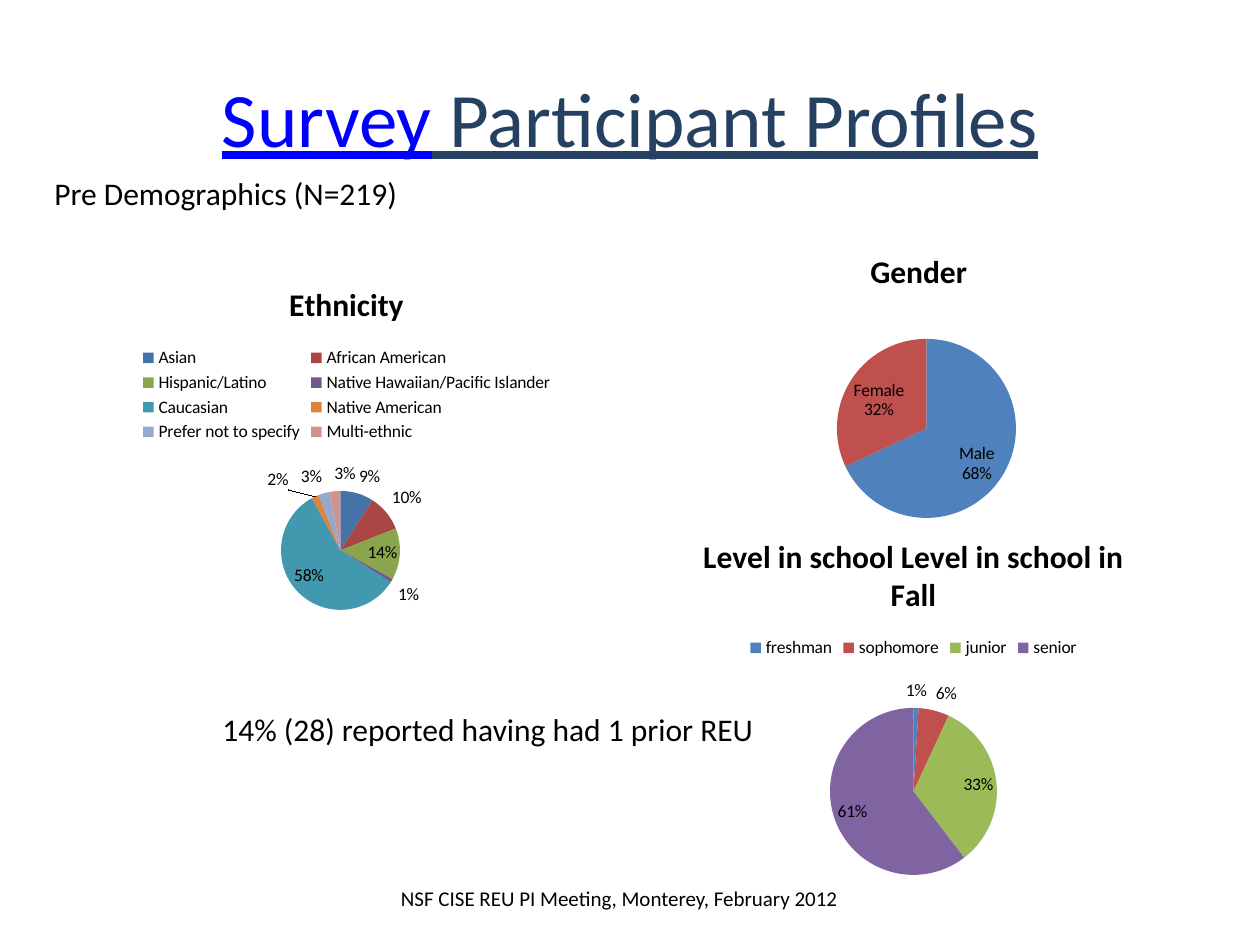
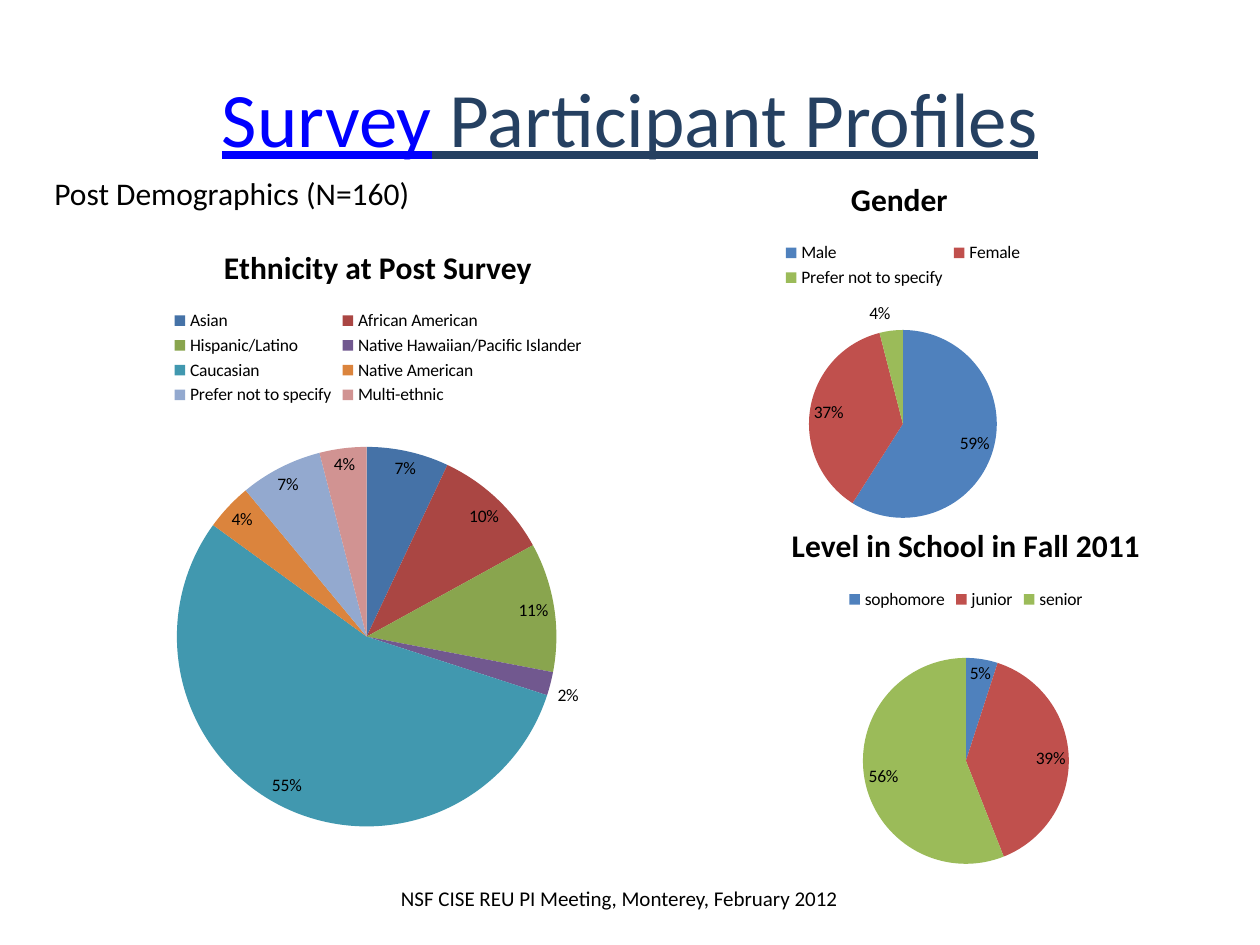
from pptx import Presentation
from pptx.chart.data import CategoryChartData
from pptx.dml.color import RGBColor
from pptx.enum.chart import XL_CHART_TYPE as ChartType
from pptx.enum.chart import XL_LABEL_POSITION as LabelPosition
from pptx.enum.chart import XL_LEGEND_POSITION as LegendPosition
from pptx.enum.text import MSO_ANCHOR as Anchor
from pptx.enum.text import PP_ALIGN as Align
from pptx.oxml import parse_xml
from pptx.oxml.ns import nsdecls, qn
from pptx.util import Pt

COLORS = {
    "text": "000000", "link": "0000FF", "title": "254061",
    "blue": "4F81BD", "red": "C0504D", "green": "9BBB59", "purple": "8064A2",
    "deep blue": "4572A7", "deep red": "AA4643", "deep green": "89A54E",
    "deep purple": "71588F", "teal": "4198AF", "orange": "DB843D",
    "pale blue": "93A9CF", "pale red": "D19392",
}
BASIC = ["blue", "red", "green", "purple"]
ETHNIC = ["deep blue", "deep red", "deep green", "deep purple",
          "teal", "orange", "pale blue", "pale red"]
ETHNICITIES = ["Asian", "African American", "Hispanic/Latino",
               "Native Hawaiian/Pacific Islander", "Caucasian",
               "Native American", "Prefer not to specify", "Multi-ethnic"]
GENDERS = ["Male", "Female", "Prefer not to specify"]
LEVELS = ["freshman", "sophomore", "junior", "senior"]


class Deck:
    font_name = "Calibri"

    def __init__(self):
        self.prs = Presentation()
        self.prs.slide_width, self.prs.slide_height = Pt(720), Pt(540)
        self.slide = None

    def style(self, font, size, color="text", bold=False):
        font.name, font.size, font.bold = self.font_name, Pt(size), bold
        font.color.rgb = RGBColor.from_string(COLORS[color])

    def run(self, paragraph, text, size, color="text"):
        run = paragraph.add_run()
        run.text = text
        self.style(run.font, size, color)
        return run

    def text(self, box, text, size=18, align=Align.LEFT, anchor=Anchor.TOP):
        frame = self.slide.shapes.add_textbox(*map(Pt, box)).text_frame
        frame.word_wrap = True
        frame.vertical_anchor = anchor
        paragraph = frame.paragraphs[0]
        paragraph.alignment = align
        self.run(paragraph, text, size)

    def profile_slide(self, demographics):
        """Start a slide with the shared title, subtitle and footer."""
        self.slide = self.prs.slides.add_slide(self.prs.slide_layouts[5])
        title = self.slide.shapes.title
        title.left, title.top, title.width, title.height = map(Pt, (36, 21.6, 648, 90))
        title.text_frame.vertical_anchor = Anchor.MIDDLE
        heading = title.text_frame.paragraphs[0]
        heading.alignment = Align.CENTER
        for words, color in (("Survey", "link"), (" Participant Profiles", "title")):
            self.run(heading, words, 44, color).font.underline = True
        self.text((24, 96, 678, 29), demographics)
        self.text((210, 498, 288, 30), "NSF CISE REU PI Meeting, Monterey, February 2012",
                  12, Align.CENTER, Anchor.MIDDLE)

    def pie(self, box, circle, title, categories, values, palette=BASIC,
            series="Series 1", legend=True, names=False, as_values=False):
        """Draw a pie whose circle is (left, top, diameter) on the slide."""
        data = CategoryChartData()
        data.categories = categories
        data.add_series(series, values)
        chart = self.slide.shapes.add_chart(ChartType.PIE, *map(Pt, box), data).chart
        self.style(chart.font, 10)
        heading = chart.chart_title.text_frame.paragraphs[0]
        self.run(heading, title, 18).font.bold = True
        chart.has_legend = legend
        if legend:
            chart.legend.position = LegendPosition.TOP
            chart.legend.include_in_layout = False
            self.style(chart.legend.font, 10)

        plot = chart.plots[0]
        plot.vary_by_categories = True
        for index, color in zip(range(len(categories)), palette):
            fill = plot.series[0].points[index].format.fill
            fill.solid()
            fill.fore_color.rgb = RGBColor.from_string(COLORS[color])
        plot.has_data_labels = True
        labels = plot.data_labels
        self.style(labels.font, 10)
        labels.number_format = '0"%"' if as_values else "0%"
        labels.number_format_is_linked = False
        labels.show_value, labels.show_percentage = as_values, not as_values
        labels.show_category_name = names
        labels.position = LabelPosition.BEST_FIT
        if names:
            separator = parse_xml(f"<c:separator {nsdecls('c')}>\n</c:separator>")
            labels._element.find(qn("c:showBubbleSize")).addnext(separator)
        self.place_circle(chart, box, circle)

    def place_circle(self, chart, box, circle):
        """Fix the plot area and leave the chart background clear."""
        left, top, width, height = box
        x, y, diameter = circle
        shares = {"x": (x - left) / width, "y": (y - top) / height,
                  "w": diameter / width, "h": diameter / height}
        parts = "".join(f'<c:{key} val="{share:.4f}"/>' for key, share in shares.items())
        layout = parse_xml(
            f'<c:layout {nsdecls("c")}><c:manualLayout><c:layoutTarget val="inner"/>'
            f'<c:xMode val="edge"/><c:yMode val="edge"/>{parts}</c:manualLayout></c:layout>')
        area = chart.element.find(f"{qn('c:chart')}/{qn('c:plotArea')}")
        for old in area.findall(qn("c:layout")):
            area.remove(old)
        area.insert(0, layout)
        clear = parse_xml(f'<c:spPr {nsdecls("c", "a")}><a:noFill/>'
                          '<a:ln><a:noFill/></a:ln></c:spPr>')
        chart.element.find(qn("c:txPr")).addprevious(clear)


def main():
    deck = Deck()

    deck.profile_slide("Pre Demographics (N=219)")
    deck.pie((390, 132, 270, 186), (478.3, 193.7, 102.3), "Gender",
             GENDERS, [68, 32, None], legend=False, names=True)
    deck.pie((18, 150, 360, 216), (160.6, 280.6, 68), "Ethnicity",
             ETHNICITIES, [9, 10, 14, 1, 58, 2, 3, 3], ETHNIC)
    deck.text((120, 402, 336, 29), "14% (28) reported having had 1 prior REU")
    deck.pie((366, 294, 312, 216), (474.3, 404.6, 95.4),
             "Level in school Level in school in Fall",
             LEVELS, [1, 6, 33, 61], as_values=True)

    deck.profile_slide("Post Demographics (N=160)")
    fall_level = "Level in School in Fall 2011"
    deck.pie((402, 288, 300, 216), (493.1, 376, 117.7), fall_level,
             LEVELS[1:], [5, 39, 56], series=fall_level)
    deck.pie((18, 126, 396, 356.4), (101.1, 255.4, 216.9), "Ethnicity at Post Survey",
             ETHNICITIES, [7, 10, 11, 2, 55, 4, 7, 4], ETHNIC)
    deck.pie((378, 90, 276, 216), (462.3, 188.6, 107.4), "Gender ",
             GENDERS, [59, 37, 4])

    deck.prs.save("out.pptx")


if __name__ == "__main__":
    main()
